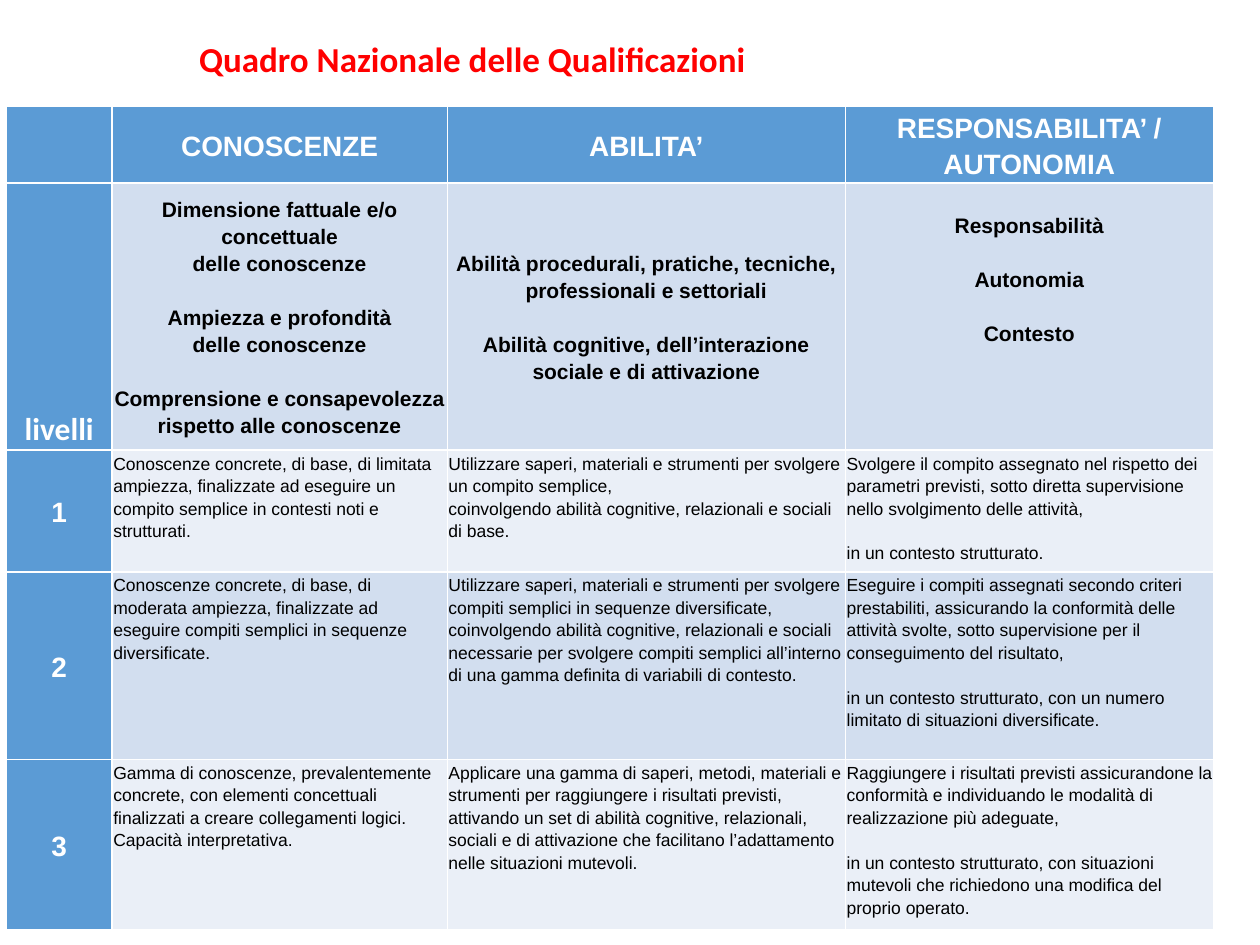
import pptx
import pptx.dml.color
import pptx.enum.text
import pptx.util
from pptx.util import Inches

COLOURS = {
    "title": "FF0000",
    "header": "5B9BD5",
    "dark_band": "D2DEEF",
    "light_band": "EAEFF7",
    "white": "FFFFFF",
    "black": "000000",
}
COLUMN_WIDTHS = [0.84, 2.66, 3.16, 2.92]
ROW_HEIGHTS = [0.59, 2.12, 0.93, 1.49, 1.14]
LINE_SPACING = 1.15
INSET = 0.01
CENTER = pptx.enum.text.PP_ALIGN.CENTER
LEFT = pptx.enum.text.PP_ALIGN.LEFT
TOP = pptx.enum.text.MSO_ANCHOR.TOP
MIDDLE = pptx.enum.text.MSO_ANCHOR.MIDDLE
BOTTOM = pptx.enum.text.MSO_ANCHOR.BOTTOM

HEADINGS = ["CONOSCENZE", "ABILITA’", "RESPONSABILITA’ / AUTONOMIA"]
DIMENSIONS = [
    [
        ["Dimensione fattuale e/o concettuale", "delle conoscenze"],
        ["Ampiezza e profondità", "delle conoscenze"],
        ["Comprensione e consapevolezza", "rispetto alle conoscenze"],
    ],
    [
        ["Abilità procedurali, pratiche, tecniche, professionali e settoriali"],
        ["Abilità cognitive, dell’interazione sociale e di attivazione"],
    ],
    [["Responsabilità"], ["Autonomia"], ["Contesto"]],
]
LEVELS = [
    [
        [["Conoscenze concrete, di base, di limitata ampiezza, finalizzate ad eseguire "
          "un compito semplice in contesti noti e strutturati."]],
        [["Utilizzare saperi, materiali e strumenti per svolgere un compito semplice,",
          "coinvolgendo abilità cognitive, relazionali e sociali di base."]],
        [["Svolgere il compito assegnato nel rispetto dei parametri previsti, sotto "
          "diretta supervisione nello svolgimento delle attività,"],
         ["in un contesto strutturato."]],
    ],
    [
        [["Conoscenze concrete, di base, di moderata ampiezza, finalizzate ad eseguire "
          "compiti semplici in sequenze diversificate."]],
        [["Utilizzare saperi, materiali e strumenti per svolgere compiti semplici in "
          "sequenze diversificate,",
          "coinvolgendo abilità cognitive, relazionali e sociali necessarie per svolgere "
          "compiti semplici all’interno di una gamma definita di variabili di contesto."]],
        [["Eseguire i compiti assegnati secondo criteri prestabiliti, assicurando la "
          "conformità delle attività svolte, sotto supervisione per il conseguimento "
          "del risultato,"],
         ["in un contesto strutturato, con un numero limitato di situazioni "
          "diversificate."]],
    ],
    [
        [["Gamma di conoscenze, prevalentemente concrete, con elementi concettuali "
          "finalizzati a creare collegamenti logici.",
          "Capacità interpretativa."]],
        [["Applicare una gamma di saperi, metodi, materiali e strumenti per raggiungere "
          "i risultati previsti,",
          "attivando un set di abilità cognitive, relazionali, sociali e di attivazione "
          "che facilitano l’adattamento nelle situazioni mutevoli."]],
        [["Raggiungere i risultati previsti assicurandone la conformità e individuando "
          "le modalità di realizzazione più adeguate,"],
         ["in un contesto strutturato, con situazioni mutevoli che richiedono una "
          "modifica del proprio operato."]],
    ],
]


def colour(name):
    return pptx.dml.color.RGBColor.from_string(COLOURS[name])


def format_runs(paragraph, size, ink, bold, typeface):
    for span in paragraph.runs:
        span.font.size = pptx.util.Pt(size)
        span.font.bold = bold
        span.font.name = typeface
        span.font.color.rgb = colour(ink)


def add_title(slide, text):
    box = slide.shapes.title
    box.left, box.top = Inches(1.48), Inches(0.25)
    box.width, box.height = Inches(7.63), Inches(0.44)
    frame = box.text_frame
    frame.text = text
    frame.vertical_anchor = TOP
    frame.auto_size = pptx.enum.text.MSO_AUTO_SIZE.SHAPE_TO_FIT_TEXT
    frame.paragraphs[0].alignment = LEFT
    format_runs(frame.paragraphs[0], 20, "title", True, "Calibri")


def add_grid(slide):
    frame = slide.shapes.add_table(
        len(ROW_HEIGHTS), len(COLUMN_WIDTHS), Inches(0.05), Inches(0.84),
        Inches(sum(COLUMN_WIDTHS)), Inches(sum(ROW_HEIGHTS)))
    table = frame.table
    table.first_col = True
    table.horz_banding = False
    for column, width in zip(table.columns, COLUMN_WIDTHS):
        column.width = Inches(width)
    for row, height in zip(table.rows, ROW_HEIGHTS):
        row.height = Inches(height)
    return table


def fill_cell(cell, fill, groups=(), size=16, ink="white", bold=True,
              typeface="Arial", alignment=CENTER, anchor=MIDDLE):
    cell.fill.solid()
    cell.fill.fore_color.rgb = colour(fill)
    cell.margin_left = cell.margin_right = Inches(INSET)
    cell.margin_top = cell.margin_bottom = Inches(INSET)
    cell.vertical_anchor = anchor
    lines = [line for group in groups for line in group]
    cell.text_frame.text = "\n".join(lines)
    paragraphs = iter(cell.text_frame.paragraphs)
    for group_index, group in enumerate(groups):
        for line_index, paragraph in zip(range(len(group)), paragraphs):
            paragraph.alignment = alignment
            paragraph.line_spacing = LINE_SPACING
            if group_index and not line_index:
                paragraph.space_before = pptx.util.Pt(round(size * 1.285, 1))
            format_runs(paragraph, size, ink, bold, typeface)


def fill_headings(table):
    fill_cell(table.cell(0, 0), "header")
    for column, heading in enumerate(HEADINGS, 1):
        fill_cell(table.cell(0, column), "header", [[heading]])
    table.cell(0, 3).margin_top = table.cell(0, 3).margin_bottom = 0


def fill_dimensions(table):
    fill_cell(table.cell(1, 0), "header", [["livelli"]], size=18,
              typeface="Calibri", anchor=BOTTOM)
    for column, groups in enumerate(DIMENSIONS, 1):
        fill_cell(table.cell(1, column), "dark_band", groups, size=12, ink="black",
                  anchor=TOP if column == 3 else MIDDLE)
    table.cell(1, 3).margin_top = Inches(0.22)


def fill_levels(table):
    for level, descriptions in enumerate(LEVELS, 1):
        row = level + 1
        band = "dark_band" if row % 2 else "light_band"
        fill_cell(table.cell(row, 0), "header", [[str(level)]])
        for column, groups in enumerate(descriptions, 1):
            fill_cell(table.cell(row, column), band, groups, size=10, ink="black",
                      bold=False, alignment=LEFT, anchor=TOP)


def main():
    deck = pptx.Presentation()
    deck.slide_width, deck.slide_height = Inches(10), Inches(7.5)
    slide = deck.slides.add_slide(deck.slide_layouts[5])
    add_title(slide, "Quadro Nazionale delle Qualificazioni")
    table = add_grid(slide)
    fill_headings(table)
    fill_dimensions(table)
    fill_levels(table)
    deck.save("out.pptx")


if __name__ == "__main__":
    main()
